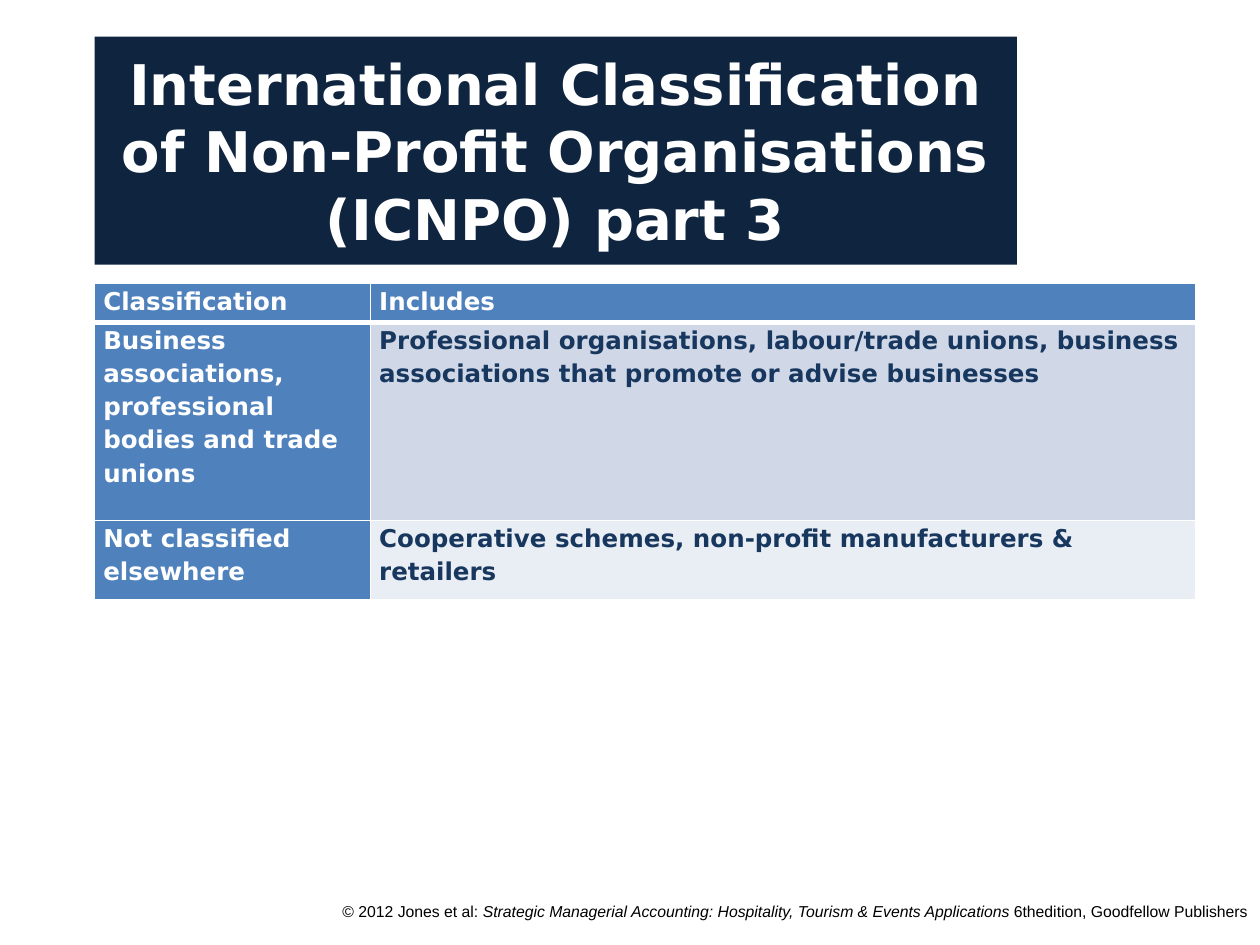
from lxml.etree import SubElement
from pptx import Presentation
from pptx.dml.color import RGBColor
from pptx.enum.text import MSO_ANCHOR as Anchor, MSO_AUTO_SIZE as AutoSize, PP_ALIGN as Align
from pptx.oxml.ns import qn
from pptx.util import Inches, Pt

WHITE = RGBColor(0xFF, 0xFF, 0xFF)
BLACK = RGBColor(0x00, 0x00, 0x00)
NAVY = RGBColor(0x0F, 0x24, 0x3E)
BLUE = RGBColor(0x4F, 0x81, 0xBD)
INK = RGBColor(0x17, 0x37, 0x5E)
BAND_DARK = RGBColor(0xD0, 0xD8, 0xE8)
BAND_LIGHT = RGBColor(0xE9, 0xED, 0xF4)

MAIN_FONT = "DejaVu Sans"
TITLE = "International Classification of Non-Profit Organisations (ICNPO) part 3"
ROWS = [
    ("Classification", "Includes"),
    ("Business associations, professional bodies and trade unions",
     "Professional organisations, labour/trade unions, business associations "
     "that promote or advise businesses"),
    ("Not classified elsewhere",
     "Cooperative schemes, non-profit manufacturers & retailers"),
]
INCLUDES_STYLES = [(BLUE, WHITE), (BAND_DARK, INK), (BAND_LIGHT, INK)]
COLUMN_WIDTHS = [2.19, 6.55]
ROW_HEIGHTS = [0.31, 1.57, 0.63]
FOOTER = [
    ("© 2012 Jones et al: ", False),
    ("Strategic Managerial Accounting: Hospitality, Tourism & Events Applications ", True),
    ("6thedition, Goodfellow Publishers", False),
]
LEFT = 0.75


def add_span(para, text, font, size, color, bold=False, italic=False):
    span = para.add_run()
    span.text = text
    span.font.name = font
    span.font.size = Pt(size)
    span.font.color.rgb = color
    span.font.bold = bold
    span.font.italic = italic


def add_borders(cell, bottom_width):
    properties = cell._tc.get_or_add_tcPr()
    for side, width in (("L", 1), ("R", 1), ("T", 1), ("B", bottom_width)):
        line = SubElement(properties, qn(f"a:ln{side}"), w=str(Pt(width)))
        fill = SubElement(line, qn("a:solidFill"))
        SubElement(fill, qn("a:srgbClr"), val=str(WHITE))


def add_title(page):
    title = page.shapes.title
    title.left, title.top = Inches(LEFT), Inches(0.29)
    title.width, title.height = Inches(7.32), Inches(1.81)
    title.fill.solid()
    title.fill.fore_color.rgb = NAVY
    frame = title.text_frame
    frame.word_wrap = True
    frame.auto_size = AutoSize.NONE
    frame.vertical_anchor = Anchor.MIDDLE
    para = frame.paragraphs[0]
    para.alignment = Align.CENTER
    add_span(para, TITLE, MAIN_FONT, 32, WHITE, bold=True)


def add_classification_table(page):
    table = page.shapes.add_table(
        len(ROWS), len(COLUMN_WIDTHS), Inches(LEFT), Inches(2.25),
        Inches(sum(COLUMN_WIDTHS)), Inches(sum(ROW_HEIGHTS))).table
    for column, width in zip(table.columns, COLUMN_WIDTHS):
        column.width = Inches(width)
    for row, height in zip(table.rows, ROW_HEIGHTS):
        row.height = Inches(height)
    for row_index, texts in enumerate(ROWS):
        styles = [(BLUE, WHITE), INCLUDES_STYLES[row_index]]
        for column_index, (text, (fill, color)) in enumerate(zip(texts, styles)):
            cell = table.cell(row_index, column_index)
            add_borders(cell, 3 if row_index == 0 else 1)
            cell.fill.solid()
            cell.fill.fore_color.rgb = fill
            cell.margin_left = cell.margin_right = Inches(0.07)
            cell.margin_top = cell.margin_bottom = 0
            para = cell.text_frame.paragraphs[0]
            para.line_spacing = 1.15
            add_span(para, text, MAIN_FONT, 14, color, bold=True)


def add_footer(page):
    box = page.shapes.add_textbox(Inches(2.23), Inches(7.11), Inches(7.77), Inches(0.39))
    box.text_frame.word_wrap = True
    para = box.text_frame.paragraphs[0]
    para.alignment = Align.RIGHT
    for text, italic in FOOTER:
        add_span(para, text, "Arial", 9, BLACK, italic=italic)


def main():
    deck = Presentation()
    deck.slide_width, deck.slide_height = Inches(10), Inches(7.5)
    page = deck.slides.add_slide(deck.slide_layouts[5])
    add_footer(page)
    add_title(page)
    add_classification_table(page)
    deck.save("out.pptx")


if __name__ == "__main__":
    main()
